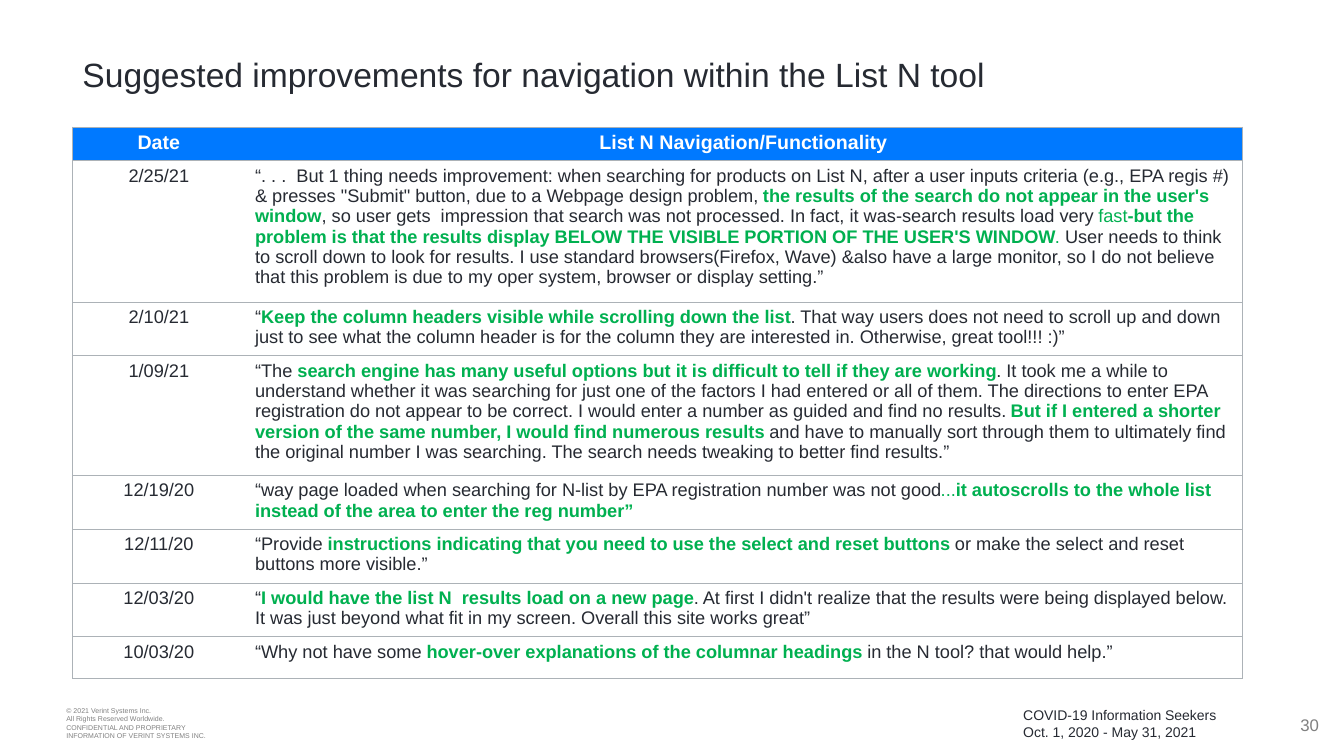
from lxml import etree
from pptx import Presentation
from pptx import util as u
from pptx.dml.color import RGBColor
from pptx.enum import text
from pptx.oxml.ns import qn

INK, GREEN, GREY = "262A32", "00B050", "808080"
BLUE, WHITE, RULE = "0079FF", "FFFFFF", "ACB2B7"
MID, LOW = text.MSO_ANCHOR.MIDDLE, text.MSO_ANCHOR.BOTTOM
LEFT, CENTER, RIGHT = (text.PP_ALIGN.LEFT, text.PP_ALIGN.CENTER,
                       text.PP_ALIGN.RIGHT)

PLAIN, LIGHT, STRONG = (INK, False), (GREEN, False), (GREEN, True)
HEAD = ("Date", "List N Navigation/Functionality")
QUOTES = [
    ("2/25/21", 1.31, [
        ("“. . .  But 1 thing needs improvement: when searching for products "
         "on List N, after a user inputs criteria (e.g., EPA regis #) & "
         "presses \"Submit\" button, due to a Webpage design problem, ", PLAIN),
        ("the results of the search do not appear in the user's window", STRONG),
        (", so user gets  impression that search was not processed. In fact, "
         "it was-search results load very ", PLAIN),
        ("fast", LIGHT),
        ("-but the problem is that the results display BELOW THE VISIBLE "
         "PORTION OF THE USER'S WINDOW", STRONG),
        (". ", LIGHT),
        ("User needs to think to scroll down to look for results. I use "
         "standard browsers(Firefox, Wave) &also have a large monitor, so I "
         "do not believe that this problem is due to my oper system, browser "
         "or display setting.”", PLAIN)]),
    ("2/10/21", 0.51, [
        ("“", PLAIN),
        ("Keep the column headers visible while scrolling down the list", STRONG),
        (". That way users does not need to scroll up and down just to see "
         "what the column header is for the column they are interested in. "
         "Otherwise, great tool!!! :)”", PLAIN)]),
    ("1/09/21", 1.1, [
        ("“The ", PLAIN),
        ("search engine has many useful options but it is difficult to tell "
         "if they are working", STRONG),
        (". It took me a while to understand whether it was searching for "
         "just one of the factors I had entered or all of them. The "
         "directions to enter EPA registration do not appear to be correct. "
         "I would enter a number as guided and find no results. ", PLAIN),
        ("But if I entered a shorter version of the same number, I would "
         "find numerous results ", STRONG),
        ("and have to manually sort through them to ultimately find the "
         "original number I was searching. The search needs tweaking to "
         "better find results.”", PLAIN)]),
    ("12/19/20", 0.5, [
        ("“way page loaded when searching for N-list by EPA registration "
         "number was not good", PLAIN),
        ("...", LIGHT),
        ("it autoscrolls to the whole list instead of the area to enter the "
         "reg number”", STRONG)]),
    ("12/11/20", 0.5, [
        ("“Provide ", PLAIN),
        ("instructions indicating that you need to use the select and reset "
         "buttons ", STRONG),
        ("or make the select and reset buttons more visible.”", PLAIN)]),
    ("12/03/20", 0.5, [
        ("“", PLAIN),
        ("I would have the list N  results load on a new page", STRONG),
        (". At first I didn't realize that the results were being displayed "
         "below. It was just beyond what fit in my screen. Overall this site "
         "works great”", PLAIN)]),
    ("10/03/20", 0.41, [
        ("“Why not have some ", PLAIN),
        ("hover-over explanations of the columnar headings ", STRONG),
        ("in the N tool? that would help.”", PLAIN)]),
]
BOXES = [
    ((0.56, 6.94, 2.4, 0.47), 5, GREY, LEFT, MID,
     ["© 2021 Verint Systems Inc.", "All Rights Reserved Worldwide.",
      "CONFIDENTIAL AND PROPRIETARY", "INFORMATION OF VERINT SYSTEMS INC."]),
    ((0.72, 0.28, 12.14, 0.7), 24, INK, LEFT, LOW,
     ["Suggested improvements for navigation within the List N tool"]),
    ((12.63, 6.99, 0.55, 0.4), 12, GREY, RIGHT, MID, ["30"]),
    ((10.05, 6.94, 2.85, 0.47), 10, INK, LEFT, MID,
     ["COVID-19 Information Seekers", "Oct. 1, 2020 - May 31, 2021"]),
]
COLS = (1.71, 9.89)
TOP = 0.32


def color(code):
    return RGBColor.from_string(code)


def write(para, words, size, code, bold=False):
    run = para.add_run()
    run.text = words
    run.font.name = "Arial"
    run.font.size = u.Pt(size)
    run.font.bold = bold
    run.font.color.rgb = color(code)


def border(cell, shown):
    props = cell._tc.get_or_add_tcPr()
    for at, side in enumerate(("lnL", "lnR", "lnT", "lnB")):
        line = etree.Element(qn("a:" + side), w=str(u.Pt(0.75)))
        if side in shown:
            fill = etree.SubElement(line, qn("a:solidFill"))
            etree.SubElement(fill, qn("a:srgbClr"), val=RULE)
        else:
            etree.SubElement(line, qn("a:noFill"))
        props.insert(at, line)


def fill_cell(cell, col, parts, size, back, align):
    cell.fill.solid()
    cell.fill.fore_color.rgb = color(back)
    border(cell, ("lnT", "lnB", "lnR" if col else "lnL"))
    para = cell.text_frame.paragraphs[0]
    para.alignment = align
    for words, (code, bold) in parts:
        write(para, words, size, code, bold)


def add_box(slide, place, size, code, align, anchor, lines):
    frame = slide.shapes.add_textbox(*map(u.Inches, place)).text_frame
    frame.word_wrap = True
    frame.vertical_anchor = anchor
    if len(lines) > 1:
        frame.margin_top = frame.margin_bottom = 0
    for i, words in enumerate(lines):
        para = frame.add_paragraph() if i else frame.paragraphs[0]
        para.alignment = align
        write(para, words, size, code)


def add_quotes(slide):
    highs = [TOP] + [high for _, high, _ in QUOTES]
    place = (0.72, 1.26, sum(COLS), sum(highs))
    table = slide.shapes.add_table(len(highs), len(COLS),
                                   *map(u.Inches, place)).table
    table.horz_banding = False
    for col, wide in zip(table.columns, COLS):
        col.width = u.Inches(wide)
    for row, high in zip(table.rows, highs):
        row.height = u.Inches(high)
    for col, words in enumerate(HEAD):
        fill_cell(table.cell(0, col), col, [(words, (WHITE, True))],
                  14, BLUE, CENTER)
    for row, (date, _, parts) in enumerate(QUOTES, 1):
        fill_cell(table.cell(row, 0), 0, [(date, PLAIN)], 13, WHITE, CENTER)
        fill_cell(table.cell(row, 1), 1, parts, 13, WHITE, LEFT)


def main():
    deck = Presentation()
    deck.slide_width, deck.slide_height = u.Inches(13.33), u.Inches(7.5)
    slide = deck.slides.add_slide(deck.slide_layouts[6])
    for box in BOXES:
        add_box(slide, *box)
    add_quotes(slide)
    deck.save("out.pptx")


if __name__ == "__main__":
    main()
